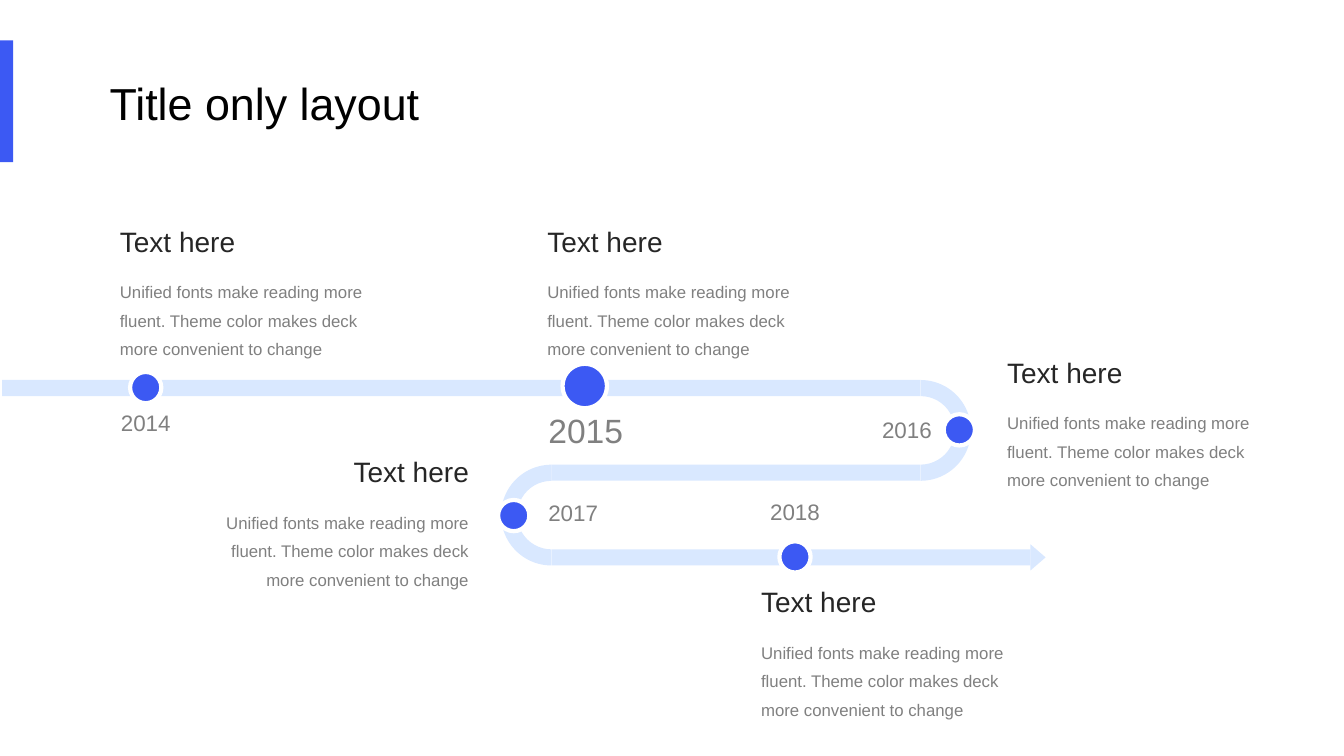
from pptx import Presentation
from pptx.dml.color import RGBColor
from pptx.enum.shapes import MSO_SHAPE as Kind
from pptx.enum.text import MSO_ANCHOR as Anchor, MSO_AUTO_SIZE as Fit, PP_ALIGN as Align
from pptx.util import Inches, Pt

BLUE = RGBColor(0x3C, 0x59, 0xF3)
PALE = RGBColor(0xD9, 0xE8, 0xFF)
WHITE = RGBColor(0xFF, 0xFF, 0xFF)
BLACK = RGBColor(0x00, 0x00, 0x00)
DARK = RGBColor(0x26, 0x26, 0x26)
GREY = RGBColor(0x80, 0x80, 0x80)

HEAD = "Text here"
BODY = "Unified fonts make reading more fluent. Theme color makes deck more convenient to change"
BAND = 0.16
TURN = 1.0
STEP = TURN - BAND

NOTES = [
    (1.09, 2.17, Align.LEFT),
    (5.33, 2.17, Align.LEFT),
    (9.89, 3.47, Align.LEFT),
    (1.77, 4.46, Align.RIGHT),
    (7.45, 5.75, Align.LEFT),
]
SMALL = (0.31, 0.71, 0.37, 16)
LARGE = (0.44, 1.06, 0.5, 24)
STOPS = [
    ("2014", 1.29, 3.69, 1.09, 4.01, SMALL),
    ("2015", 5.58, 3.61, 5.28, 4.02, LARGE),
    ("2016", 9.36, 4.11, 8.64, 4.08, SMALL),
    ("2017", 4.94, 4.96, 5.33, 4.9, SMALL),
    ("2018", 7.73, 5.37, 7.53, 4.89, SMALL),
]


def add_form(slide, kind, left, top, width, height, fill, turn=0):
    """Add a filled preset shape without outline or shadow."""
    form = slide.shapes.add_shape(kind, Inches(left), Inches(top), Inches(width), Inches(height))
    form.shadow.inherit = False
    form.fill.solid()
    form.fill.fore_color.rgb = fill
    form.line.fill.background()
    form.rotation = turn
    return form


def set_text(frame, text, size, color, align, anchor=Anchor.TOP):
    """Write one styled paragraph into a text frame."""
    frame.word_wrap = True
    frame.auto_size = Fit.NONE
    frame.vertical_anchor = anchor
    frame.text = text
    line = frame.paragraphs[0]
    line.alignment = align
    font = line.runs[0].font
    font.name = "Arial"
    font.size = Pt(size)
    font.color.rgb = color
    return line


def add_text(slide, left, top, width, height, *style):
    """Add a text box holding one styled paragraph."""
    box = slide.shapes.add_textbox(Inches(left), Inches(top), Inches(width), Inches(height))
    return set_text(box.text_frame, *style)


def add_title(slide, left, top, width, height):
    """Place the slide title and the accent bar at the slide edge."""
    title = slide.shapes.title
    title.left, title.top = Inches(left), Inches(top)
    title.width, title.height = Inches(width), Inches(height)
    set_text(title.text_frame, "Title only layout", 32, BLACK, Align.CENTER)
    add_form(slide, Kind.RECTANGLE, 0, top - 0.3, 0.13, 1.21, BLUE)


def add_road(slide, left, top, west, east, tip):
    """Draw the winding road from its left end to the arrow tip."""
    for mid, row, turn in ((east, 0, 90), (west, 1, 270)):
        bend = add_form(slide, Kind.BLOCK_ARC, mid - TURN / 2, top + row * STEP, TURN, TURN, PALE, turn)
        for spot, value in enumerate((108, 0, BAND / TURN)):
            bend.adjustments[spot] = value
    wide, high = 0.26, 0.15
    for row, (start, end) in enumerate(((left, east), (west, east), (west, tip - high))):
        add_form(slide, Kind.RECTANGLE, start, top + row * STEP, end - start, BAND, PALE)
    mid = top + 2 * STEP + BAND / 2
    add_form(slide, Kind.ISOSCELES_TRIANGLE, tip - (high + wide) / 2, mid - high / 2, wide, high, PALE, 90)


def add_stop(slide, year, left, top, tag_x, tag_y, look):
    """Add a round marker and its year label."""
    side, width, height, size = look
    dot = add_form(slide, Kind.OVAL, left, top, side, side, BLUE)
    dot.line.color.rgb = WHITE
    dot.line.width = Pt(3)
    add_text(slide, tag_x, tag_y, width, height, year, size, GREY, Align.CENTER)


def add_note(slide, left, top, align):
    """Add a heading with its paragraph below."""
    width = 2.98
    add_text(slide, left, top, width, 0.44, HEAD, 20, DARK, align, Anchor.MIDDLE)
    add_text(slide, left, top + 0.5, width, 0.97, BODY, 12, GREY, align).line_spacing = 1.4


def main():
    """Build the timeline slide and save it."""
    deck = Presentation()
    deck.slide_width, deck.slide_height = Inches(13.33), Inches(7.5)
    slide = deck.slides.add_slide(deck.slide_layouts[5])
    add_title(slide, 0.87, 0.7, 3.51, 0.64)
    add_road(slide, 0.02, 3.77, 5.47, 9.13, 10.37)
    for stop in STOPS:
        add_stop(slide, *stop)
    for note in NOTES:
        add_note(slide, *note)
    deck.save("out.pptx")


if __name__ == "__main__":
    main()
